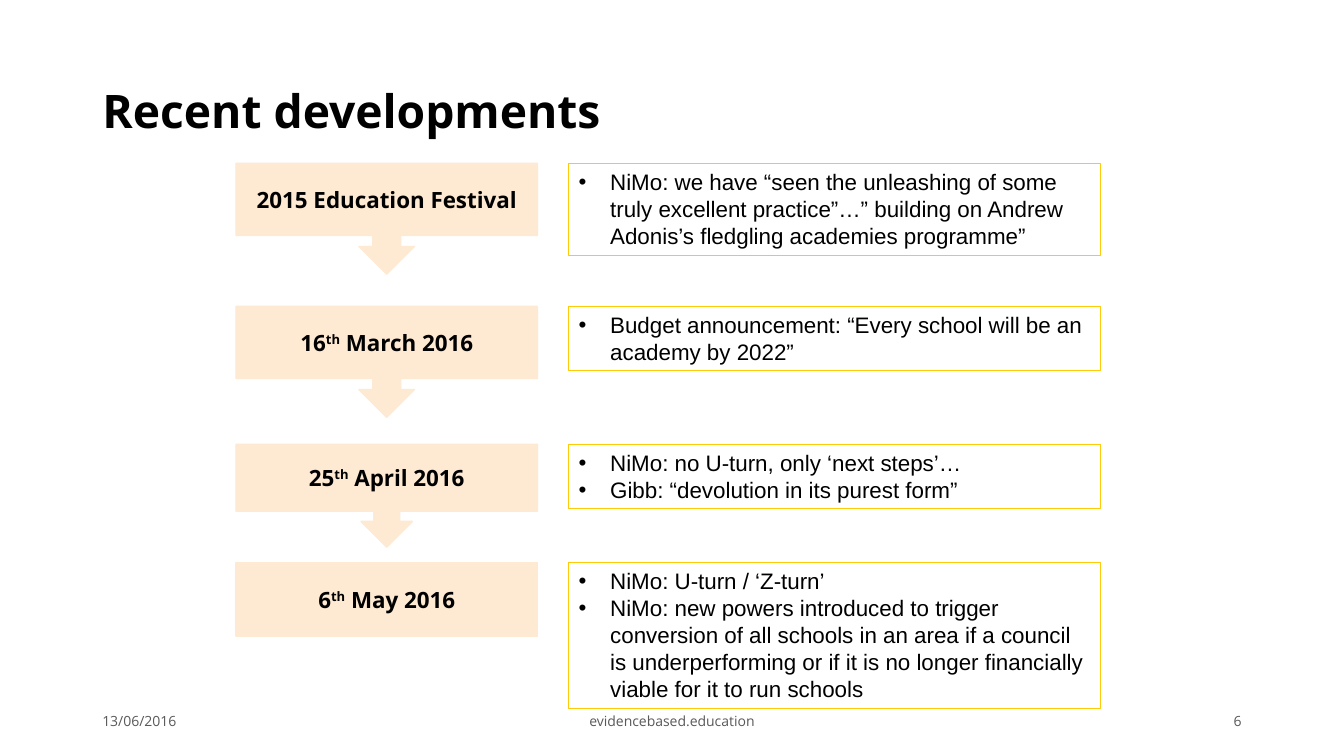
from lxml import etree
from pptx import Presentation
from pptx.dml.color import RGBColor
from pptx.enum.shapes import MSO_SHAPE
from pptx.enum.text import MSO_ANCHOR, MSO_AUTO_SIZE, PP_ALIGN
from pptx.oxml.ns import qn
from pptx.util import Pt

CALLOUT, RECTANGLE = MSO_SHAPE.DOWN_ARROW_CALLOUT, MSO_SHAPE.RECTANGLE
MIDDLE, TOP = MSO_ANCHOR.MIDDLE, MSO_ANCHOR.TOP
LEFT, CENTER, RIGHT = PP_ALIGN.LEFT, PP_ALIGN.CENTER, PP_ALIGN.RIGHT
FIT_SHAPE, FIT_NONE = MSO_AUTO_SIZE.SHAPE_TO_FIT_TEXT, MSO_AUTO_SIZE.NONE
TITLE_ONLY = 5

COLORS = {"text": "000000", "footer": "595959", "step": "FEE9D2", "note": "FFCA08"}
HEADING_FONT, NOTE_FONT = "Open Sans", "Arial"
BULLET_INDENT = 22.5
STEP_LEFT, STEP_WIDTH = 168.6, 215.3
NOTE_LEFT, NOTE_WIDTH = 406.3, 380

STEPS = [
    (CALLOUT, 116.7, 79.2, ("2015 Education Festival",), 65.6, [
        "NiMo: we have “seen the unleashing of some truly excellent practice”…” "
        "building on Andrew Adonis’s fledgling academies programme”"]),
    (CALLOUT, 218.9, 79.2, ("16", "th", " March 2016"), 46, [
        "Budget announcement: “Every school will be an academy by 2022”"]),
    (CALLOUT, 317.4, 73.4, ("25", "th", " April 2016"), 46, [
        "NiMo: no U-turn, only ‘next steps’…",
        "Gibb: “devolution in its purest form”"]),
    (RECTANGLE, 401.7, 52.6, ("6", "th", " May 2016"), 104.4, [
        "NiMo: U-turn / ‘Z-turn’",
        "NiMo: new powers introduced to trigger conversion of all schools in an area "
        "if a council is underperforming or if it is no longer financially viable "
        "for it to run schools"]),
]
FOOTERS = [
    (66, 216, LEFT, "13/06/2016"),
    (318, 324, CENTER, "evidencebased.education"),
    (678, 216, RIGHT, "6"),
]


def color(name):
    """Return the named palette colour."""
    return RGBColor.from_string(COLORS[name])


def add_run(paragraph, text, size, font=HEADING_FONT, bold=False, tint="text"):
    """Append one formatted run to a paragraph."""
    run = paragraph.add_run()
    run.text = text
    run.font.size = Pt(size)
    run.font.name = font
    run.font.bold = bold
    run.font.color.rgb = color(tint)
    return run


def add_box(slide, kind, left, top, width, height, outline, weight):
    """Add an unfilled outlined shape without shadow."""
    shape = slide.shapes.add_shape(kind, Pt(left), Pt(top), Pt(width), Pt(height))
    shape.shadow.inherit = False
    shape.fill.background()
    shape.line.color.rgb = color(outline)
    shape.line.width = Pt(weight)
    shape.text_frame.word_wrap = True
    return shape


def add_title(slide, left, top, width, height):
    """Place and write the slide title."""
    title = slide.shapes.title
    title.left, title.top, title.width, title.height = map(Pt, (left, top, width, height))
    frame = title.text_frame
    frame.vertical_anchor = MIDDLE
    frame.auto_size = FIT_NONE
    paragraph = frame.paragraphs[0]
    paragraph.alignment = LEFT
    paragraph.line_spacing = 0.9
    add_run(paragraph, "Recent developments", 33, bold=True)


def add_step(slide, kind, left, top, width, height, date_parts):
    """Add a filled timeline step whose second text part is superscript."""
    shape = add_box(slide, kind, left, top, width, height, "step", 1)
    shape.fill.solid()
    shape.fill.fore_color.rgb = color("step")
    shape.text_frame.vertical_anchor = MIDDLE
    paragraph = shape.text_frame.paragraphs[0]
    paragraph.alignment = CENTER
    for index, part in enumerate(date_parts):
        run = add_run(paragraph, part, 16, bold=True)
        if index == 1:
            run._r.get_or_add_rPr().set("baseline", "30000")


def add_note(slide, left, top, width, height, points):
    """Add an outlined box of bullet points."""
    frame = add_box(slide, RECTANGLE, left, top, width, height, "note", 0.75).text_frame
    frame.vertical_anchor = TOP
    frame.auto_size = FIT_SHAPE
    for index, point in enumerate(points):
        paragraph = frame.add_paragraph() if index else frame.paragraphs[0]
        paragraph.alignment = LEFT
        properties = paragraph._p.get_or_add_pPr()
        properties.set("marL", str(Pt(BULLET_INDENT)))
        properties.set("indent", str(-Pt(BULLET_INDENT)))
        etree.SubElement(properties, qn("a:buFont"), typeface=NOTE_FONT)
        etree.SubElement(properties, qn("a:buChar"), char="•")
        add_run(paragraph, point, 16, NOTE_FONT)


def add_footer(slide, left, top, width, height, alignment, text):
    """Add one footer text."""
    box = slide.shapes.add_textbox(Pt(left), Pt(top), Pt(width), Pt(height))
    frame = box.text_frame
    frame.word_wrap = True
    frame.vertical_anchor = MIDDLE
    paragraph = frame.paragraphs[0]
    paragraph.alignment = alignment
    add_run(paragraph, text, 10, tint="footer")


def main():
    """Build and save the presentation."""
    presentation = Presentation()
    presentation.slide_width, presentation.slide_height = Pt(960), Pt(540)
    slide = presentation.slides.add_slide(presentation.slide_layouts[TITLE_ONLY])
    add_title(slide, 66, 28.8, 828, 104.4)
    for left, width, alignment, text in FOOTERS:
        add_footer(slide, left, 500.4, width, 28.8, alignment, text)
    for kind, top, height, date_parts, note_height, points in STEPS:
        add_step(slide, kind, STEP_LEFT, top, STEP_WIDTH, height, date_parts)
        add_note(slide, NOTE_LEFT, top, NOTE_WIDTH, note_height, points)
    presentation.save("out.pptx")


if __name__ == "__main__":
    main()
